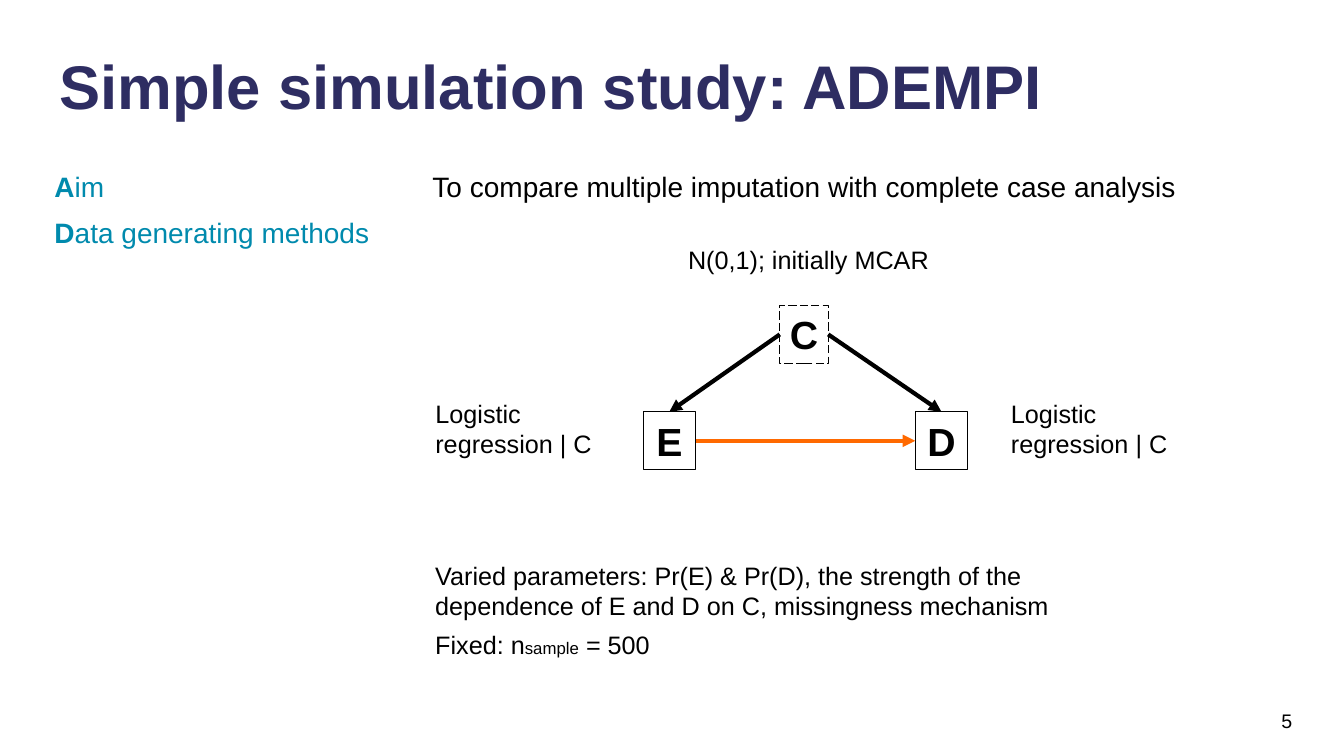
from lxml.etree import SubElement
from pptx import Presentation
from pptx.dml.color import RGBColor
from pptx.enum.dml import MSO_LINE
from pptx.enum.shapes import MSO_CONNECTOR, MSO_SHAPE
from pptx.enum.text import MSO_ANCHOR as ANCHOR, MSO_AUTO_SIZE as FIT, PP_ALIGN as ALIGN
from pptx.oxml import parse_xml
from pptx.oxml.ns import nsdecls, qn
from pptx.util import Pt

NAVY = RGBColor(0x2E, 0x2D, 0x62)
TEAL = RGBColor(0x00, 0x8A, 0xAD)
ORANGE = RGBColor(0xFF, 0x69, 0x00)
BLACK = RGBColor(0, 0, 0)
WHITE = RGBColor(0xFF, 0xFF, 0xFF)
FONT = "Arial"
TOP, LEFT, BOTTOM, RIGHT = range(4)


def style(p, size, color=BLACK, bold=None, align=ALIGN.LEFT, after=0):
    """Set the font and layout of a paragraph."""
    p.font.name, p.font.size, p.font.bold = FONT, Pt(size), bold
    p.font.color.rgb = color
    p.alignment = align
    p.space_before, p.space_after = Pt(0), Pt(after)


def add_title(s, text, x, y, w, h):
    """Fill the title placeholder."""
    sp = s.shapes.title
    sp.left, sp.top, sp.width, sp.height = Pt(x), Pt(y), Pt(w), Pt(h)
    tf = sp.text_frame
    tf.text, tf.word_wrap, tf.auto_size = text, True, FIT.NONE
    tf.vertical_anchor = ANCHOR.MIDDLE
    p = tf.paragraphs[0]
    style(p, 44, NAVY, True)
    p.line_spacing = 0.9


def add_text(s, paragraphs, x, y, w, h, size=18, after=0, align=ALIGN.LEFT, anchor=ANCHOR.TOP):
    """Add a wrapping text box; each paragraph is a list of (text, size) runs."""
    tf = s.shapes.add_textbox(Pt(x), Pt(y), Pt(w), Pt(h)).text_frame
    tf.word_wrap, tf.vertical_anchor = True, anchor
    for i, runs in enumerate(paragraphs):
        p = tf.add_paragraph() if i else tf.paragraphs[0]
        style(p, size, align=align, after=after)
        for text, run_size in runs:
            r = p.add_run()
            r.text = text
            if run_size:
                r.font.size = Pt(run_size)


def format_cell(cell, initial, rest, color):
    """Write a cell with a bold initial, a white fill and white borders."""
    cell.margin_left = cell.margin_right = cell.margin_top = cell.margin_bottom = Pt(3.6)
    p = cell.text_frame.paragraphs[0]
    style(p, 20, color, after=6)
    for text, bold in ((initial, True), (rest, False)):
        if text:
            r = p.add_run()
            r.text, r.font.bold = text, bold
    cell.fill.solid()
    cell.fill.fore_color.rgb = WHITE
    for i, side in enumerate("LRTB"):
        border = parse_xml(
            f'<a:ln{side} {nsdecls("a")} w="{Pt(0.5)}"><a:solidFill>'
            f'<a:srgbClr val="{WHITE}"/></a:solidFill></a:ln{side}>')
        cell.fill._xPr.insert(i, border)


def add_steps(s, rows, x, y, widths, heights):
    """Add the table of study steps."""
    frame = s.shapes.add_table(len(rows), len(widths), Pt(x), Pt(y),
                               Pt(sum(widths)), Pt(sum(heights)))
    table = frame.table
    table.first_row = table.horz_banding = False
    for column, width in zip(table.columns, widths):
        column.width = Pt(width)
    for i, (step, detail) in enumerate(rows):
        table.rows[i].height = Pt(heights[i])
        format_cell(table.cell(i, 0), step[0], step[1:], TEAL)
        format_cell(table.cell(i, 1), "", detail, BLACK)


def add_node(s, letter, x, y, w, h, dash=None):
    """Add one outlined variable box."""
    sp = s.shapes.add_shape(MSO_SHAPE.RECTANGLE, Pt(x), Pt(y), Pt(w), Pt(h))
    sp.shadow.inherit = False
    sp.fill.background()
    sp.line.color.rgb, sp.line.width = BLACK, Pt(0.75)
    if dash:
        sp.line.dash_style = dash
    tf = sp.text_frame
    tf.text, tf.word_wrap, tf.vertical_anchor = letter, False, ANCHOR.TOP
    style(tf.paragraphs[0], 28, BLACK, True, ALIGN.CENTER)
    return sp


def add_arrow(s, start, start_side, end, end_side, color):
    """Join two boxes with an arrow."""
    line = s.shapes.add_connector(MSO_CONNECTOR.STRAIGHT, 0, 0, 0, 0)
    line.begin_connect(start, start_side)
    line.end_connect(end, end_side)
    line.line.color.rgb, line.line.width = color, Pt(3)
    SubElement(line.line._get_or_add_ln(), qn("a:tailEnd"), type="triangle")
    SubElement(line._element.spPr, qn("a:effectLst"))


def add_diagram(s, x, y, w, h):
    """Draw the causal diagram of C, E and D with its labels."""
    node_w, node_h, c_w = 37.4, 41.4, 34.6
    base = y + h - node_h
    c = add_node(s, "C", x + (w - c_w) / 2 - 1, y, c_w, node_h, MSO_LINE.LONG_DASH)
    e = add_node(s, "E", x, base, node_w, node_h)
    d = add_node(s, "D", x + w - node_w, base, node_w, node_h)
    add_arrow(s, c, RIGHT, d, TOP, BLACK)
    add_arrow(s, e, RIGHT, d, LEFT, ORANGE)
    add_arrow(s, c, LEFT, e, TOP, BLACK)
    add_text(s, [[("N(0,1); initially MCAR", None)]], x + 25, y - 47, 260, 29)
    for left, width in ((x - 155.5, 145.5), (x + w + 23.8, 133.2)):
        add_text(s, [[("Logistic regression | C", None)]], left, base - 13.2, width, 51)


def build_study_slide(prs):
    """Build the simulation study slide."""
    s = prs.slides.add_slide(prs.slide_layouts[5])
    add_title(s, "Simple simulation study: ADEMPI", 35.3, 18.7, 895, 90)
    add_steps(s, [("Aim", "To compare multiple imputation with complete case analysis"),
                  ("Data generating methods", "")],
              35.3, 119.5, (270, 616.3), (32.4, 208))
    add_diagram(s, 459.4, 218.2, 231.8, 117.4)
    add_text(s, [[("Varied parameters: Pr(E) & Pr(D), the strength of the dependence "
                   "of E and D on C, missingness mechanism", None)],
                 [("Fixed: n", None), ("sample", 12), (" = 500", None)]],
             303.8, 396.7, 480, 78.5, after=6)
    add_text(s, [[("5", None)]], 678.2, 500.4, 252, 28.8, size=14,
             align=ALIGN.RIGHT, anchor=ANCHOR.MIDDLE)


def main():
    """Create and save the presentation."""
    prs = Presentation()
    prs.slide_width, prs.slide_height = Pt(960), Pt(540)
    build_study_slide(prs)
    prs.save("out.pptx")


if __name__ == "__main__":
    main()
